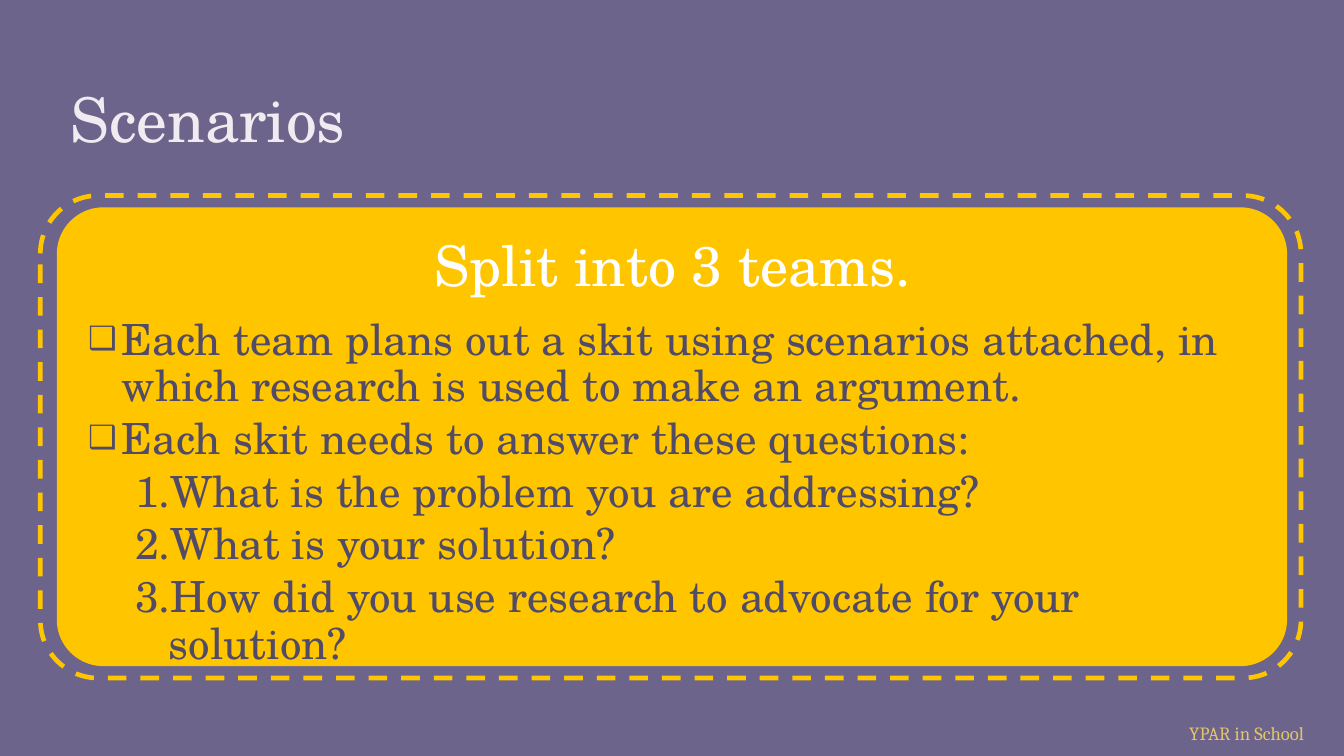
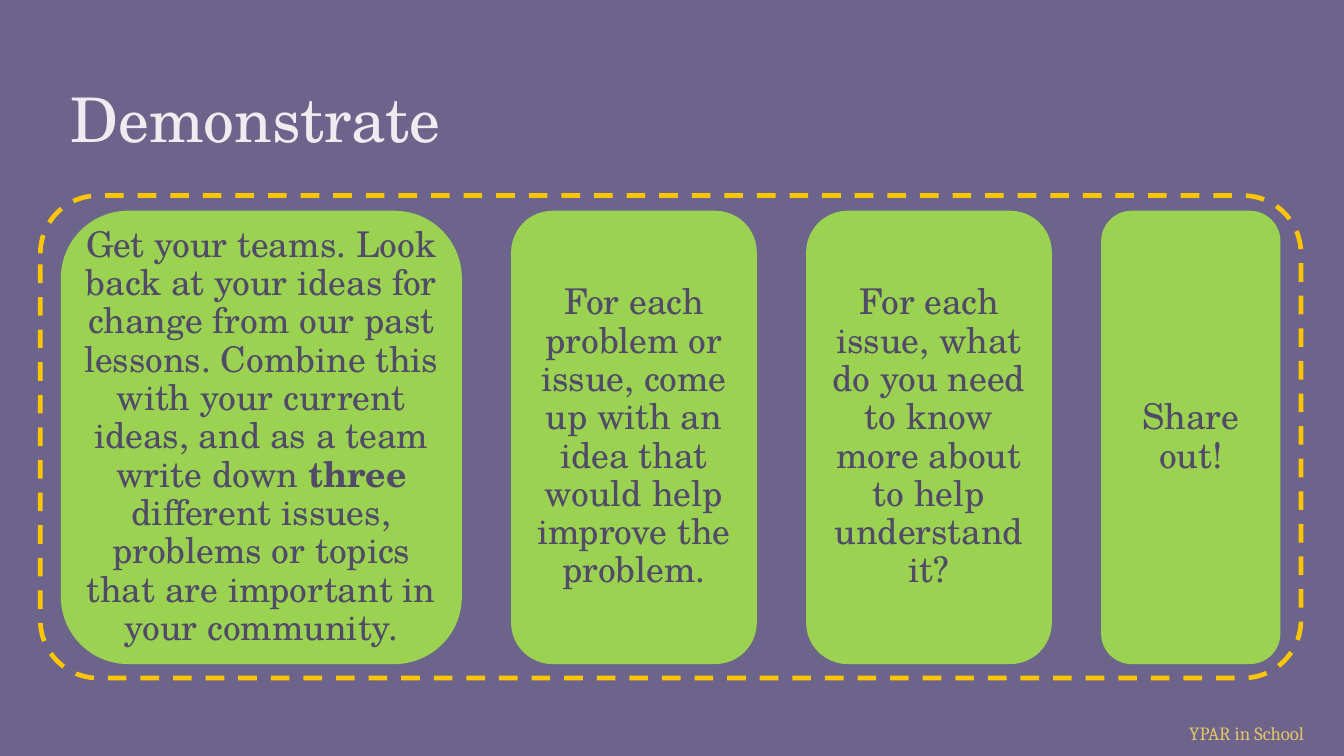
from lxml.etree import SubElement
from pptx import Presentation
from pptx.dml.color import RGBColor
from pptx.enum.dml import MSO_LINE_DASH_STYLE as Dash
from pptx.enum.shapes import MSO_AUTO_SHAPE_TYPE as ShapeType
from pptx.enum.text import MSO_ANCHOR as Anchor, MSO_AUTO_SIZE as AutoSize, PP_ALIGN as Align
from pptx.oxml.ns import qn
from pptx.util import Pt

PX = 4572  # 200 px to the inch

PURPLE = RGBColor(0x6C, 0x64, 0x8B)
DARK = RGBColor(0x51, 0x4B, 0x68)
PALE = RGBColor(0xF0, 0xEB, 0xF0)
WHITE = RGBColor(0xFF, 0xFF, 0xFF)
YELLOW = RGBColor(0xFF, 0xC6, 0x00)
GOLD = RGBColor(0xE4, 0xC4, 0x69)
GREEN = RGBColor(0x9B, 0xD2, 0x52)
SERIF = "TeX Gyre Schola"
FOOTER_FONT = "Cambria"


def add_run(paragraph, text, size, color, name=SERIF, bold=False):
    run = paragraph.add_run()
    run.text = text
    run.font.size = Pt(size)
    run.font.name = name
    run.font.bold = bold
    run.font.color.rgb = color


def add_panel(slide, box, corner, line_color, line_width, fill=None):
    shape = slide.shapes.add_shape(ShapeType.ROUNDED_RECTANGLE, *[v * PX for v in box])
    shape.adjustments[0] = corner
    shape.shadow.inherit = False
    if fill is None:
        shape.fill.background()
    else:
        shape.fill.solid()
        shape.fill.fore_color.rgb = fill
    shape.line.color.rgb = line_color
    shape.line.width = Pt(line_width)
    return shape


presentation = Presentation()
presentation.slide_width = 2000 * PX
presentation.slide_height = 1125 * PX
background = presentation.slide_master.background.fill
background.solid()
background.fore_color.rgb = PURPLE

# Footer and title of both slides
slides = []
for layout, heading in ((1, "Scenarios"), (5, "Demonstrate")):
    slide = presentation.slides.add_slide(presentation.slide_layouts[layout])
    slides.append(slide)

    footer = slide.shapes.add_textbox(1750 * PX, 1064 * PX, 560 * PX, 54 * PX)
    footer.text_frame.word_wrap = True
    add_run(footer.text_frame.paragraphs[0], "YPAR in School", 10, GOLD, FOOTER_FONT)

    title = slide.shapes.title
    title.left, title.top, title.width, title.height = [v * PX for v in (85, 100, 1830, 150)]
    frame = title.text_frame
    frame.auto_size = AutoSize.NONE
    frame.vertical_anchor = Anchor.BOTTOM
    frame.margin_left = frame.margin_right = frame.margin_top = frame.margin_bottom = 20 * PX
    frame.paragraphs[0].alignment = Align.LEFT
    add_run(frame.paragraphs[0], heading, 33, PALE)

scenarios, demonstrate = slides

# Scenarios: yellow card with the task list on top
body = scenarios.placeholders[1]
card = add_panel(scenarios, (86, 310, 1828, 680), 0.1, YELLOW, 1, YELLOW)
body.element.addprevious(card.element)
body.left, body.top, body.width, body.height = [v * PX for v in (107, 330, 1788, 640)]
frame = body.text_frame
frame.auto_size = AutoSize.NONE
frame.vertical_anchor = Anchor.TOP
frame.margin_left = frame.margin_right = frame.margin_top = frame.margin_bottom = 24 * PX

# Per level: left margin, hanging indent, space after, size, colour
LEVELS = [
    (0, 0, 10.5, 30, WHITE),
    (50, -50, 3.5, 23, DARK),
    (120, -50, 3.5, 23, DARK),
]
tasks = [
    (0, "Split into 3 teams."),
    (1, "Each team plans out a skit using scenarios attached, in which research is used to make an argument."),
    (1, "Each skit needs to answer these questions:"),
    (2, "What is the problem you are addressing?"),
    (2, "What is your solution?"),
    (2, "How did you use research to advocate for your solution?"),
]
for index, (level, text) in enumerate(tasks):
    paragraph = frame.add_paragraph() if index else frame.paragraphs[0]
    margin, indent, space_after, size, color = LEVELS[level]
    paragraph.level = level
    paragraph.alignment = Align.LEFT if level else Align.CENTER
    properties = paragraph._p.get_or_add_pPr()
    properties.set("marL", str(margin * PX))
    properties.set("indent", str(indent * PX))
    if level == 0:
        SubElement(properties, qn("a:buNone"))
    elif level == 1:
        SubElement(properties, qn("a:buSzPct"), val="75000")
        SubElement(properties, qn("a:buChar"), char="❑")
    else:
        SubElement(properties, qn("a:buFont"), typeface="+mj-lt")
        SubElement(properties, qn("a:buAutoNum"), type="arabicPeriod")
    paragraph.line_spacing = 0.9
    paragraph.space_before = Pt(0)
    paragraph.space_after = Pt(space_after)
    add_run(paragraph, text, size, color)

# Demonstrate: a row of green step cards, as (width, runs)
steps = [
    (594, [
        ("Get your teams. Look back at your ideas for change from our past lessons. "
         "Combine this with your current ideas, and as a team write down ", False),
        ("three", True),
        (" different issues, problems or topics that are important in your community.", False),
    ]),
    (363, [("For each problem or issue, come up with an idea that would help improve the problem.", False)]),
    (363, [("For each issue, what do you need to know more about to help understand it?", False)]),
    (264, [("Share out!", False)]),
]
STEP_GAP = 76
left = 92
for width, runs in steps:
    step = add_panel(demonstrate, (left, 315, width, 672), 0.1667, GREEN, 1, GREEN)
    frame = step.text_frame
    frame.word_wrap = True
    frame.vertical_anchor = Anchor.MIDDLE
    frame.margin_left = frame.margin_right = frame.margin_top = frame.margin_bottom = 2 * PX
    paragraph = frame.paragraphs[0]
    paragraph.alignment = Align.CENTER
    paragraph.line_spacing = 0.9
    for text, bold in runs:
        add_run(paragraph, text, 19, DARK, bold=bold)
    left += width + STEP_GAP

# Dashed frame around the content of both slides
for slide in slides:
    border = add_panel(slide, (60, 291, 1876, 718), 0.12, YELLOW, 2.5)
    border.line.dash_style = Dash.DASH

presentation.save("out.pptx")
